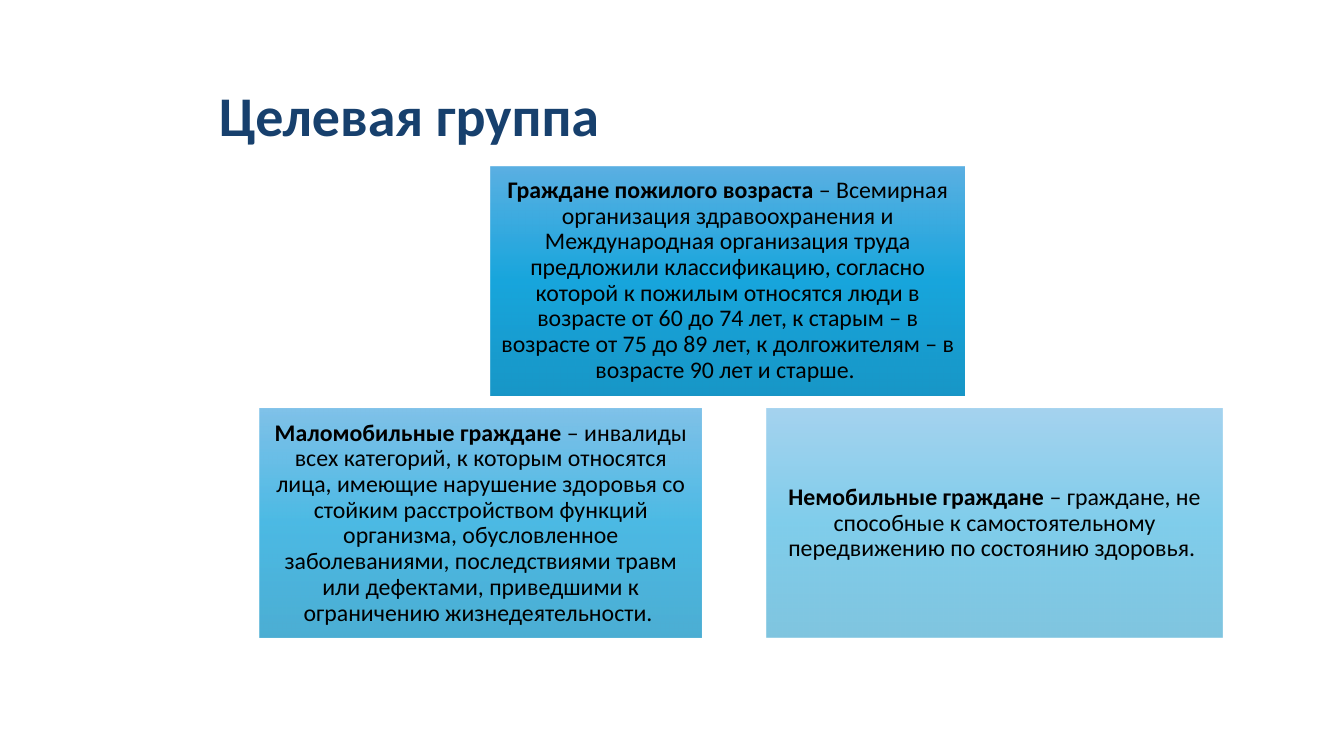
import pptx
import pptx.dml.color
import pptx.enum.shapes
import pptx.enum.text
import pptx.oxml
import pptx.oxml.ns
import pptx.util

RGBColor = pptx.dml.color.RGBColor
NAVY = RGBColor(0x17, 0x40, 0x6D)
BLACK = RGBColor(0x00, 0x00, 0x00)
LIGHT_BLUE = RGBColor(0x4B, 0xA8, 0xE0)
BLUE = RGBColor(0x00, 0x9D, 0xD9)
DEEP_BLUE = RGBColor(0x00, 0x8C, 0xC1)

TOP_ROW, BOTTOM_ROW, CARD_HEIGHT = 22, 54.1, 30.27

# left, top, width (percent of the slide), opacity (percent), term, definition
GROUPS = [
    (36.53, TOP_ROW, 35.26, 90, "Граждане пожилого возраста",
     " – Всемирная организация здравоохранения и Международная организация "
     "труда предложили классификацию, согласно которой к пожилым относятся "
     "люди в возрасте от 60 до 74 лет, к старым – в возрасте от 75 до 89 лет, "
     "к долгожителям – в возрасте 90 лет и старше. "),
    (19.35, BOTTOM_ROW, 32.86, 70, "Маломобильные граждане",
     " – инвалиды всех категорий, к которым относятся лица, имеющие нарушение "
     "здоровья со стойким расстройством функций организма, обусловленное "
     "заболеваниями, последствиями травм или дефектами, приведшими к "
     "ограничению жизнедеятельности. "),
    (57.01, BOTTOM_ROW, 33.98, 50, "Немобильные граждане",
     " – граждане, не способные к самостоятельному передвижению по состоянию "
     "здоровья. "),
]


class GroupSlide:
    font_name = "Calibri"
    line_spacing = 0.9
    card_inset = pptx.util.Inches(0.07)

    def __init__(self, presentation):
        self.width = presentation.slide_width
        self.height = presentation.slide_height
        self.slide = presentation.slides.add_slide(presentation.slide_layouts[5])

    def place(self, left, top, width, height):
        """Convert percentages of the slide to lengths."""
        return (round(self.width * left / 100), round(self.height * top / 100),
                round(self.width * width / 100), round(self.height * height / 100))

    def format_run(self, run, size, color, bold):
        run.font.name = self.font_name
        run.font.size = pptx.util.Pt(size)
        run.font.bold = bold
        run.font.color.rgb = color

    def title(self, text, *box):
        heading = self.slide.shapes.title
        heading.left, heading.top, heading.width, heading.height = self.place(*box)
        frame = heading.text_frame
        frame.text = text
        frame.vertical_anchor = pptx.enum.text.MSO_ANCHOR.MIDDLE
        paragraph = frame.paragraphs[0]
        paragraph.alignment = pptx.enum.text.PP_ALIGN.LEFT
        paragraph.line_spacing = self.line_spacing
        self.format_run(paragraph.runs[0], 40, NAVY, True)

    def fill_gradient(self, shape, opacity):
        """Fill from light to deep blue, top to bottom, with the opacity in percent."""
        stops = "".join(
            f'<a:gs pos="{position * 1000}"><a:srgbClr val="{color}">'
            f'<a:alpha val="{opacity * 1000}"/></a:srgbClr></a:gs>'
            for position, color in ((0, LIGHT_BLUE), (50, BLUE), (100, DEEP_BLUE)))
        gradient = pptx.oxml.parse_xml(
            f'<a:gradFill {pptx.oxml.ns.nsdecls("a")} rotWithShape="1">'
            f'<a:gsLst>{stops}</a:gsLst><a:lin ang="5400000" scaled="0"/></a:gradFill>')
        outline = shape.line
        outline.fill.background()
        shape.element.spPr.find(pptx.oxml.ns.qn("a:ln")).addprevious(gradient)

    def card(self, left, top, width, opacity, term, definition):
        card = self.slide.shapes.add_shape(
            pptx.enum.shapes.MSO_SHAPE.RECTANGLE,
            *self.place(left, top, width, CARD_HEIGHT))
        card.shadow.inherit = False
        self.fill_gradient(card, opacity)
        frame = card.text_frame
        frame.word_wrap = True
        frame.vertical_anchor = pptx.enum.text.MSO_ANCHOR.MIDDLE
        frame.margin_left = frame.margin_right = self.card_inset
        frame.margin_top = frame.margin_bottom = self.card_inset
        paragraph = frame.paragraphs[0]
        paragraph.alignment = pptx.enum.text.PP_ALIGN.CENTER
        paragraph.line_spacing = self.line_spacing
        paragraph.space_after = pptx.util.Pt(6)
        for text, bold in ((term, True), (definition, False)):
            run = paragraph.add_run()
            run.text = text
            self.format_run(run, 17, BLACK, bold)


def main():
    presentation = pptx.Presentation()
    presentation.slide_width = pptx.util.Inches(13.33)
    presentation.slide_height = pptx.util.Inches(7.5)
    target_groups = GroupSlide(presentation)
    target_groups.title("Целевая группа", 15.53, 6, 81.85, 19.33)
    for group in GROUPS:
        target_groups.card(*group)
    presentation.save("out.pptx")


if __name__ == "__main__":
    main()
